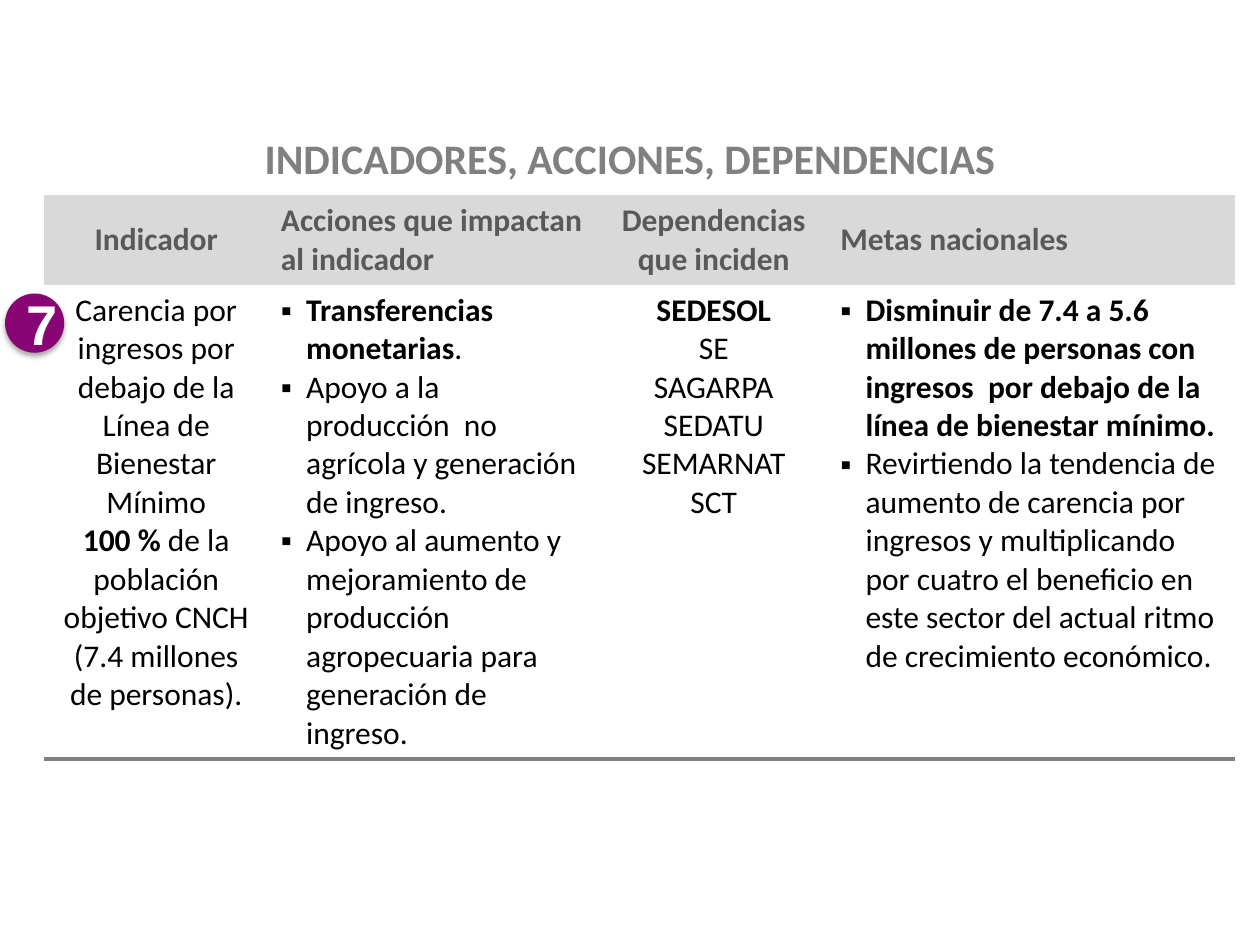
import lxml.etree
import pptx
import pptx.dml.color
import pptx.enum.shapes
import pptx.enum.text
import pptx.oxml.ns
import pptx.util

Inches, Pt = pptx.util.Inches, pptx.util.Pt
qn = pptx.oxml.ns.qn
ALIGN = pptx.enum.text.PP_ALIGN
ANCHOR = pptx.enum.text.MSO_ANCHOR

COLORS = {"title": "808080", "rule": "808080", "header": "595959", "header_fill": "D9D9D9",
          "body": "000000", "badge": "8A0574", "badge_text": "FFFFFF", "shadow": "000000"}
NO_STYLE = "{2D5ABB26-0587-4C30-8999-92F81FD0307C}"

TITLE = "INDICADORES, ACCIONES, DEPENDENCIAS"
INDICATOR_NUMBER = "7"
ROW_HEIGHTS = (0.7, 3.69)

# Paragraphs are lists of (text, bold) runs.
COLUMNS = [
    {"header": "Indicador", "width": 1.78, "bulleted": False, "body": [
        [("Carencia por ingresos por debajo de la Línea de Bienestar Mínimo", False)],
        [("100 % ", True), ("de la población objetivo CNCH", False)],
        [("(7.4 millones", False)],
        [("de personas).", False)]]},
    {"header": "Acciones que impactan al indicador", "width": 2.63, "bulleted": True, "body": [
        [("Transferencias monetarias", True), (".", False)],
        [("Apoyo a la producción  no agrícola y generación de ingreso.", False)],
        [("Apoyo al aumento y mejoramiento de producción agropecuaria para "
          "generación de ingreso.", False)]]},
    {"header": "Dependencias que inciden", "width": 1.81, "bulleted": False, "body": [
        [("SEDESOL", True)], [("SE", False)], [("SAGARPA", False)],
        [("SEDATU", False)], [("SEMARNAT", False)], [("SCT", False)]]},
    {"header": "Metas nacionales", "width": 3.23, "bulleted": True, "body": [
        [("Disminuir de 7.4 a 5.6  millones de personas con ingresos  por debajo "
          "de la línea de bienestar mínimo.", True)],
        [("Revirtiendo la tendencia de aumento de carencia por ingresos y "
          "multiplicando por cuatro el beneficio en este sector del actual ritmo "
          "de crecimiento económico.", False)]]},
]


def rgb(name):
    return pptx.dml.color.RGBColor.from_string(COLORS[name])


def add_solid_fill(parent, color):
    fill = lxml.etree.SubElement(parent, qn("a:solidFill"))
    return lxml.etree.SubElement(fill, qn("a:srgbClr"), val=COLORS[color])


def style_run(run, size, color, bold=True, font="Calibri"):
    run.font.size = Pt(size)
    run.font.name = font
    run.font.bold = bold
    run.font.color.rgb = rgb(color)


def write_paragraphs(frame, paragraphs, size, color, align, bulleted=False, font="Calibri"):
    frame.text = "\n".join("" for _ in paragraphs)
    for paragraph, runs in zip(frame.paragraphs, paragraphs):
        paragraph.alignment = align
        if bulleted:
            properties = paragraph._p.get_or_add_pPr()
            properties.set("marL", str(Inches(0.2)))
            properties.set("indent", str(Inches(-0.2)))
            lxml.etree.SubElement(properties, qn("a:buFont"), typeface="Arial")
            lxml.etree.SubElement(properties, qn("a:buChar"), char="▪")
        for text, bold in runs:
            run = paragraph.add_run()
            run.text = text
            style_run(run, size, color, bold, font)


def add_bottom_rule(cell):
    rule = lxml.etree.Element(qn("a:lnB"), w=str(Pt(3)))
    add_solid_fill(rule, "rule")
    cell._tc.get_or_add_tcPr().insert(0, rule)


def add_indicator_table(slide):
    total_width = sum(column["width"] for column in COLUMNS)
    frame = slide.shapes.add_table(2, len(COLUMNS), Inches(0.35), Inches(1.55),
                                   Inches(total_width), Inches(sum(ROW_HEIGHTS)))
    table = frame.table
    table.first_row = table.horz_banding = False
    next(frame._element.iter(qn("a:tableStyleId"))).text = NO_STYLE
    for row, height in zip(table.rows, ROW_HEIGHTS):
        row.height = Inches(height)
    for index, column in enumerate(COLUMNS):
        table.columns[index].width = Inches(column["width"])
        bulleted = column["bulleted"]
        align = ALIGN.LEFT if bulleted else ALIGN.CENTER
        header, body = table.cell(0, index), table.cell(1, index)
        header.fill.solid()
        header.fill.fore_color.rgb = rgb("header_fill")
        header.vertical_anchor = ANCHOR.MIDDLE
        write_paragraphs(header.text_frame, [[(column["header"], True)]], 18, "header", align)
        body.fill.background()
        add_bottom_rule(body)
        write_paragraphs(body.text_frame, column["body"], 18, "body", align, bulleted)


def add_badge(slide):
    badge = slide.shapes.add_shape(pptx.enum.shapes.MSO_SHAPE.OVAL, Inches(0.04),
                                   Inches(2.33), Inches(0.47), Inches(0.47))
    badge.fill.solid()
    badge.fill.fore_color.rgb = rgb("badge")
    badge.line.fill.background()
    badge.shadow.inherit = False
    effects = badge._element.spPr.find(qn("a:effectLst"))
    shadow = lxml.etree.SubElement(effects, qn("a:outerShdw"), blurRad=str(Pt(3.1)),
                                   dist=str(Pt(1.8)), dir=str(90 * 60000), rotWithShape="0")
    tint = lxml.etree.SubElement(shadow, qn("a:srgbClr"), val=COLORS["shadow"])
    lxml.etree.SubElement(tint, qn("a:alpha"), val="35000")
    badge.text_frame.vertical_anchor = ANCHOR.MIDDLE
    write_paragraphs(badge.text_frame, [[(INDICATOR_NUMBER, True)]], 32, "badge_text",
                     ALIGN.CENTER, font="Arial")


def add_title(slide):
    title = slide.shapes.add_textbox(0, Inches(0.99), Inches(10), Inches(0.51)).text_frame
    title.word_wrap = True
    title.vertical_anchor = ANCHOR.BOTTOM
    write_paragraphs(title, [[(TITLE, True)]], 24, "title", ALIGN.CENTER)


def main():
    deck = pptx.Presentation()
    deck.slide_width, deck.slide_height = Inches(10), Inches(7.5)
    slide = deck.slides.add_slide(deck.slide_layouts[6])
    add_indicator_table(slide)
    add_badge(slide)
    add_title(slide)
    deck.save("out.pptx")


if __name__ == "__main__":
    main()
